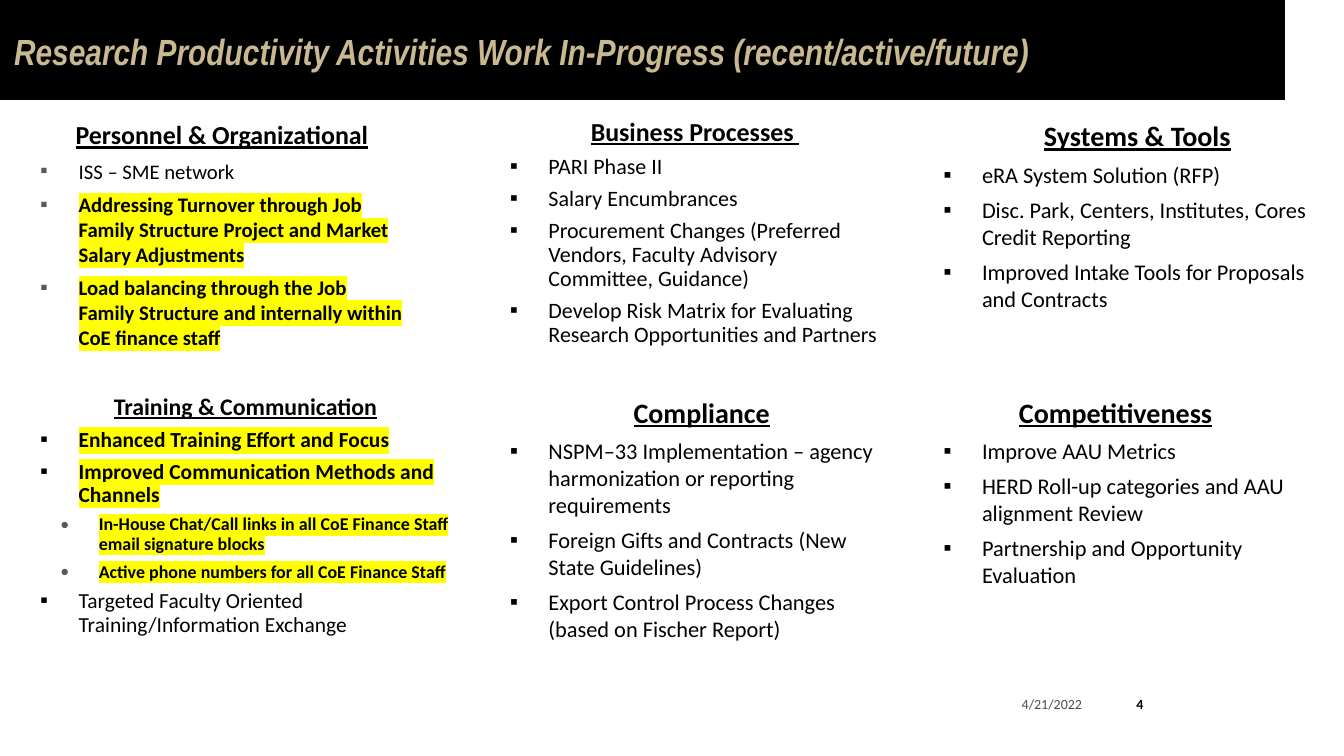
from dataclasses import dataclass

from lxml import etree
from pptx import Presentation
from pptx import util as u
from pptx.dml.color import RGBColor
from pptx.enum import shapes, text
from pptx.oxml import ns

COLUMNS = (0.36, 5.02, 9.32)
ROWS = (1.18, 3.92)
BLACK, WHITE, GOLD, GREY = "000000", "FFFFFF", "C9B991", "555960"
YELLOW = "FFFF00"
MARKED, SUBMARKED, PLAIN = "marked", "submarked", "plain"


@dataclass
class Section:
    """One headed list, placed by column and row."""
    column: int
    row: int
    width: float
    height: float
    heading: str
    heading_size: float
    item_size: float
    items: list
    line_spacing: float = 1.0
    bullet_color: str = BLACK


SECTIONS = [
    Section(0, 0, 3.63, 2.49, "Personnel & Organizational", 18.5, 14.8, [
        (PLAIN, "ISS – SME network"),
        (MARKED, "Addressing Turnover through Job Family Structure Project and Market Salary Adjustments"),
        (MARKED, "Load balancing through the Job Family Structure and internally within CoE finance staff"),
    ], bullet_color=GREY),
    Section(1, 1, 3.83, 2.89, "Compliance", 20, 16, [
        (PLAIN, "NSPM–33 Implementation – agency harmonization or reporting requirements"),
        (PLAIN, "Foreign Gifts and Contracts (New State Guidelines)"),
        (PLAIN, "Export Control Process Changes (based on Fischer Report)"),
    ]),
    Section(0, 1, 4.1, 2.74, "Training & Communication", 17, 15.3, [
        (MARKED, "Enhanced Training Effort and Focus"),
        (MARKED, "Improved Communication Methods and Channels"),
        (SUBMARKED, "In-House Chat/Call links in all CoE Finance Staff email signature blocks"),
        (SUBMARKED, "Active phone numbers for all CoE Finance Staff"),
        (PLAIN, "Targeted Faculty Oriented Training/Information Exchange"),
    ], line_spacing=0.9),
    Section(1, 0, 3.7, 2.74, "Business Processes ", 18.5, 15.7, [
        (PLAIN, "PARI Phase II"),
        (PLAIN, "Salary Encumbrances"),
        (PLAIN, "Procurement Changes (Preferred Vendors, Faculty Advisory Committee, Guidance)"),
        (PLAIN, "Develop Risk Matrix for Evaluating Research Opportunities and Partners"),
    ], line_spacing=0.9),
    Section(2, 0, 3.87, 2.49, "Systems & Tools", 20, 16, [
        (PLAIN, "eRA System Solution (RFP)"),
        (PLAIN, "Disc. Park, Centers, Institutes, Cores Credit Reporting"),
        (PLAIN, "Improved Intake Tools for Proposals and Contracts"),
    ]),
    Section(2, 1, 3.44, 2.49, "Competitiveness", 20, 16, [
        (PLAIN, "Improve AAU Metrics"),
        (PLAIN, "HERD Roll-up categories and AAU alignment Review"),
        (PLAIN, "Partnership and Opportunity Evaluation"),
    ]),
]


def rgb(value):
    """Turn a hex string into a colour."""
    return RGBColor.from_string(value)


def apply(target, values):
    """Set each attribute named in a dict."""
    for name, value in values.items():
        setattr(target, name, value)


def place(shape, left, top, width, height):
    """Move and size a shape in inches."""
    apply(shape, {"left": u.Inches(left), "top": u.Inches(top),
                  "width": u.Inches(width), "height": u.Inches(height)})


def set_frame(shape, anchor=text.MSO_ANCHOR.TOP, margins=(0, 0)):
    """Set wrapping, anchor and the side and end margins of a text frame."""
    side, end = (u.Inches(margin) for margin in margins)
    apply(shape.text_frame, {
        "word_wrap": True, "auto_size": text.MSO_AUTO_SIZE.NONE, "vertical_anchor": anchor,
        "margin_left": side, "margin_right": side, "margin_top": end, "margin_bottom": end})


def write(paragraph, words, size, color=BLACK, align=text.PP_ALIGN.LEFT,
          spacing=1.0, after=0, highlight=None, **font):
    """Write one run with its paragraph and font formats."""
    apply(paragraph, {"alignment": align, "line_spacing": spacing,
                      "space_before": u.Pt(0), "space_after": u.Pt(after)})
    run = paragraph.add_run()
    run.text = words
    apply(run.font, {"name": "Calibri", "size": u.Pt(size), **font})
    run.font.color.rgb = rgb(color)
    if highlight:
        mark = etree.Element(ns.qn("a:highlight"))
        etree.SubElement(mark, ns.qn("a:srgbClr"), val=highlight)
        run._r.get_or_add_rPr().find(ns.qn("a:solidFill")).addnext(mark)


def set_bullet(paragraph, indent, hanging=0.0, character=None, color=BLACK):
    """Set the indents and the bullet, or no bullet."""
    properties = paragraph._p.get_or_add_pPr()
    properties.set("marL", str(u.Inches(indent)))
    properties.set("indent", str(-u.Inches(hanging)))
    if character is None:
        etree.SubElement(properties, ns.qn("a:buNone"))
        return
    bullet_color = etree.SubElement(properties, ns.qn("a:buClr"))
    etree.SubElement(bullet_color, ns.qn("a:srgbClr"), val=color)
    etree.SubElement(properties, ns.qn("a:buFont"), typeface="Calibri")
    etree.SubElement(properties, ns.qn("a:buChar"), char=character)


def fill_section(shape, section):
    """Place a section and write its heading and list."""
    place(shape, COLUMNS[section.column], ROWS[section.row], section.width, section.height)
    shape.fill.solid()
    shape.fill.fore_color.rgb = rgb(WHITE)
    set_frame(shape)
    frame = shape.text_frame
    shared = {"spacing": section.line_spacing, "after": 6}
    set_bullet(frame.paragraphs[0], 0.05)
    write(frame.paragraphs[0], section.heading, section.heading_size,
          align=text.PP_ALIGN.CENTER, bold=True, underline=True, **shared)
    for style, words in section.items:
        paragraph = frame.add_paragraph()
        size = section.item_size
        if style == SUBMARKED:
            size = 12.8
            paragraph.level = 1
            set_bullet(paragraph, 0.62, 0.38, "•", GREY)
        else:
            set_bullet(paragraph, 0.42, 0.38, "▪", section.bullet_color)
        marked = style != PLAIN
        write(paragraph, words, size, bold=marked,
              highlight=YELLOW if marked else None, **shared)


def add_header(slide):
    """Add the black band and write the title over it."""
    title = slide.shapes.title
    band = slide.shapes.add_shape(shapes.MSO_SHAPE.RECTANGLE, 0, 0, u.Inches(12.74), u.Inches(0.99))
    band.shadow.inherit = False
    band.fill.solid()
    band.fill.fore_color.rgb = band.line.color.rgb = rgb(BLACK)
    band.line.width = u.Pt(1)
    title.element.addprevious(band.element)
    place(title, 0.14, 0.34, 13.06, 0.39)
    set_frame(title)
    write(title.text_frame.paragraphs[0],
          "Research Productivity Activities Work In-Progress (recent/active/future)",
          26, GOLD, spacing=0.9, name="Arial Narrow", bold=True, italic=True)


def add_footer(slide):
    """Add the date and the page number."""
    date = slide.shapes.add_textbox(0, 0, 0, 0)
    place(date, 9.56, 6.81, 1.27, 0.35)
    set_frame(date, text.MSO_ANCHOR.MIDDLE, (0.1, 0.05))
    write(date.text_frame.paragraphs[0], "4/21/2022", 10, "4D4D4D", text.PP_ALIGN.RIGHT)
    number = slide.shapes.add_shape(shapes.MSO_SHAPE.OVAL, 0, 0, 0, 0)
    place(number, 11.04, 6.78, 0.53, 0.4)
    number.shadow.inherit = False
    number.fill.background()
    number.line.fill.background()
    set_frame(number, text.MSO_ANCHOR.MIDDLE, (0.02, 0.05))
    write(number.text_frame.paragraphs[0], "4", 10, align=text.PP_ALIGN.CENTER, bold=True)


def main():
    """Build and save the slide."""
    presentation = Presentation()
    apply(presentation, {"slide_width": u.Inches(13.33), "slide_height": u.Inches(7.5)})
    slide = presentation.slides.add_slide(presentation.slide_layouts[1])
    add_header(slide)
    add_footer(slide)
    first, *others = SECTIONS
    fill_section(slide.placeholders[1], first)
    for section in others:
        fill_section(slide.shapes.add_textbox(0, 0, 0, 0), section)
    presentation.save("out.pptx")


if __name__ == "__main__":
    main()
